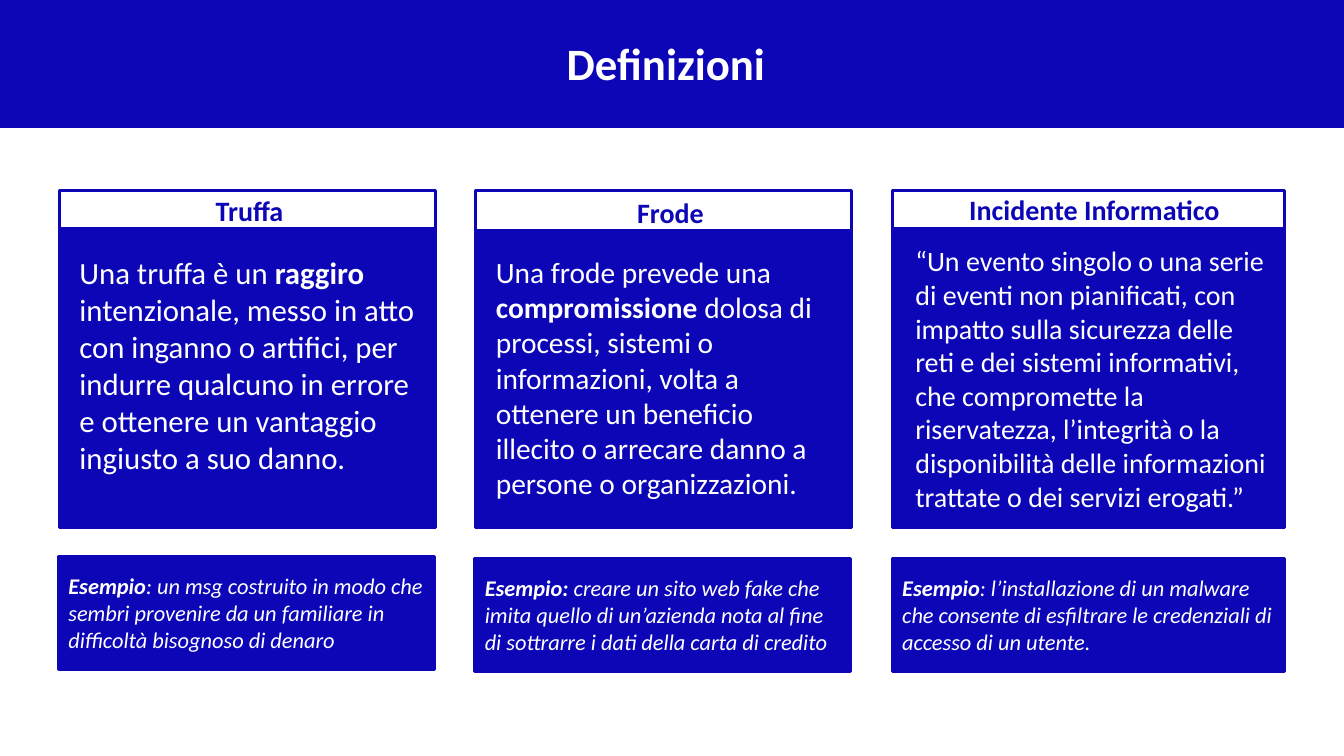
from dataclasses import dataclass

from pptx import Presentation
from pptx.dml.color import RGBColor
from pptx.enum.shapes import MSO_SHAPE
from pptx.enum.text import MSO_ANCHOR, PP_ALIGN
from pptx.util import Inches, Pt

BLUE = RGBColor(0x0C, 0x06, 0xB7)
WHITE = RGBColor(0xFF, 0xFF, 0xFF)
FONT = "Calibri"


@dataclass
class Definition:
    """One column: lengths in inches, runs as (text, bold) pairs."""
    left: float
    width: float
    heading: str
    heading_box: tuple  # offset from the card's left and top, width
    heading_align: PP_ALIGN
    fill_offset: float
    body: list
    body_box: tuple  # offset from the card's left and top, width, height
    body_size: int
    example: list
    example_box: tuple  # left, top


CARD_TOP, CARD_HEIGHT = 1.89, 3.34
EXAMPLE_HEIGHT = 1.12

DEFINITIONS = [
    Definition(
        0.59, 3.73, "Truffa", (1.45, -0.02, 1.03), PP_ALIGN.LEFT, 0.38,
        [("Una truffa è un ", False), ("raggiro", True),
         (" intenzionale, messo in atto con inganno o artifici, per indurre "
          "qualcuno in errore e ottenere un vantaggio ingiusto a suo danno.", False)],
        (0.1, 0.58, 3.53, 2.69), 22,
        [("Esempio", True),
         (": un msg costruito in modo che sembri provenire da un familiare in "
          "difficoltà bisognoso di denaro", False)],
        (0.58, 5.52)),
    Definition(
        4.72, 3.73, "Frode", (1.5, 0, 0.92), PP_ALIGN.LEFT, 0.4,
        [("Una frode prevede una ", False), ("compromissione", True),
         (" dolosa di processi, sistemi o informazioni, volta a ottenere un "
          "beneficio illecito o arrecare danno a persone o organizzazioni.", False)],
        (0.1, 0.58, 3.53, 2.57), 21,
        [("Esempio: ", True),
         ("creare un sito web fake che imita quello di un’azienda nota al fine "
          "di sottrarre i dati della carta di credito", False)],
        (4.71, 5.54)),
    Definition(
        8.85, 3.89, "Incidente Informatico", (0.27, -0.03, 3.47), PP_ALIGN.CENTER, 0.38,
        [("“Un evento singolo o una serie di eventi non pianificati, con impatto "
          "sulla sicurezza delle reti e dei sistemi informativi, che compromette "
          "la riservatezza, l’integrità o la disponibilità delle informazioni "
          "trattate o dei servizi erogati.”", False)],
        (0.13, 0.48, 3.73, 2.79), 20,
        [("Esempio", True),
         (": l’installazione di un malware che consente di esfiltrare le "
          "credenziali di accesso di un utente.", False)],
        (8.85, 5.54)),
]


def add_panel(page, left, top, width, height, filled=True):
    panel = page.shapes.add_shape(
        MSO_SHAPE.RECTANGLE, Inches(left), Inches(top), Inches(width), Inches(height))
    panel.shadow.inherit = False
    if filled:
        panel.fill.solid()
        panel.fill.fore_color.rgb = BLUE
    else:
        panel.fill.background()
    panel.line.color.rgb = BLUE
    panel.line.width = Pt(2)
    return panel


def write(box, runs, size, color, align=PP_ALIGN.LEFT, italic=None):
    box.text_frame.word_wrap = True
    para = box.text_frame.paragraphs[0]
    para.alignment = align
    for text, bold in runs:
        span = para.add_run()
        span.text = text
        span.font.name = FONT
        span.font.size = Pt(size)
        span.font.bold = bold
        span.font.italic = italic
        span.font.color.rgb = color


def add_text(page, left, top, width, height, *style):
    box = page.shapes.add_textbox(
        Inches(left), Inches(top), Inches(width), Inches(height))
    write(box, *style)


def add_title_band(page, left, top, width, height):
    band = add_panel(page, left, top, width, height)
    title = page.shapes.title
    title.element.addprevious(band.element)  # band behind the title
    title.left, title.top = Inches(left + 5.52), Inches(top + 0.33)
    title.width, title.height = Inches(2.28), Inches(0.64)
    write(title, [("Definizioni", True)], 32, WHITE)
    title.text_frame.vertical_anchor = MSO_ANCHOR.TOP


def add_definition(page, item, top, height):
    # Card: blue body inside an outline that leaves the heading strip white
    add_panel(page, item.left, top + item.fill_offset, item.width,
              height - item.fill_offset)
    add_panel(page, item.left, top, item.width, height, filled=False)

    # Heading
    dx, dy, width = item.heading_box
    add_text(page, item.left + dx, top + dy, width, 0.44,
             [(item.heading, True)], 20, BLUE, item.heading_align)

    # Definition text
    dx, dy, width, body_height = item.body_box
    add_text(page, item.left + dx, top + dy, width, body_height,
             item.body, item.body_size, WHITE)


def add_example(page, item):
    panel = add_panel(page, *item.example_box, item.width, EXAMPLE_HEIGHT)
    panel.text_frame.vertical_anchor = MSO_ANCHOR.MIDDLE
    write(panel, item.example, 16, WHITE, italic=True)


def main():
    deck = Presentation()
    deck.slide_width, deck.slide_height = Inches(13.33), Inches(7.5)
    page = deck.slides.add_slide(deck.slide_layouts[5])
    add_title_band(page, 0, -0.03, 13.33, 1.29)
    for item in DEFINITIONS:
        add_definition(page, item, CARD_TOP, CARD_HEIGHT)
        add_example(page, item)
    deck.save("out.pptx")


if __name__ == "__main__":
    main()
